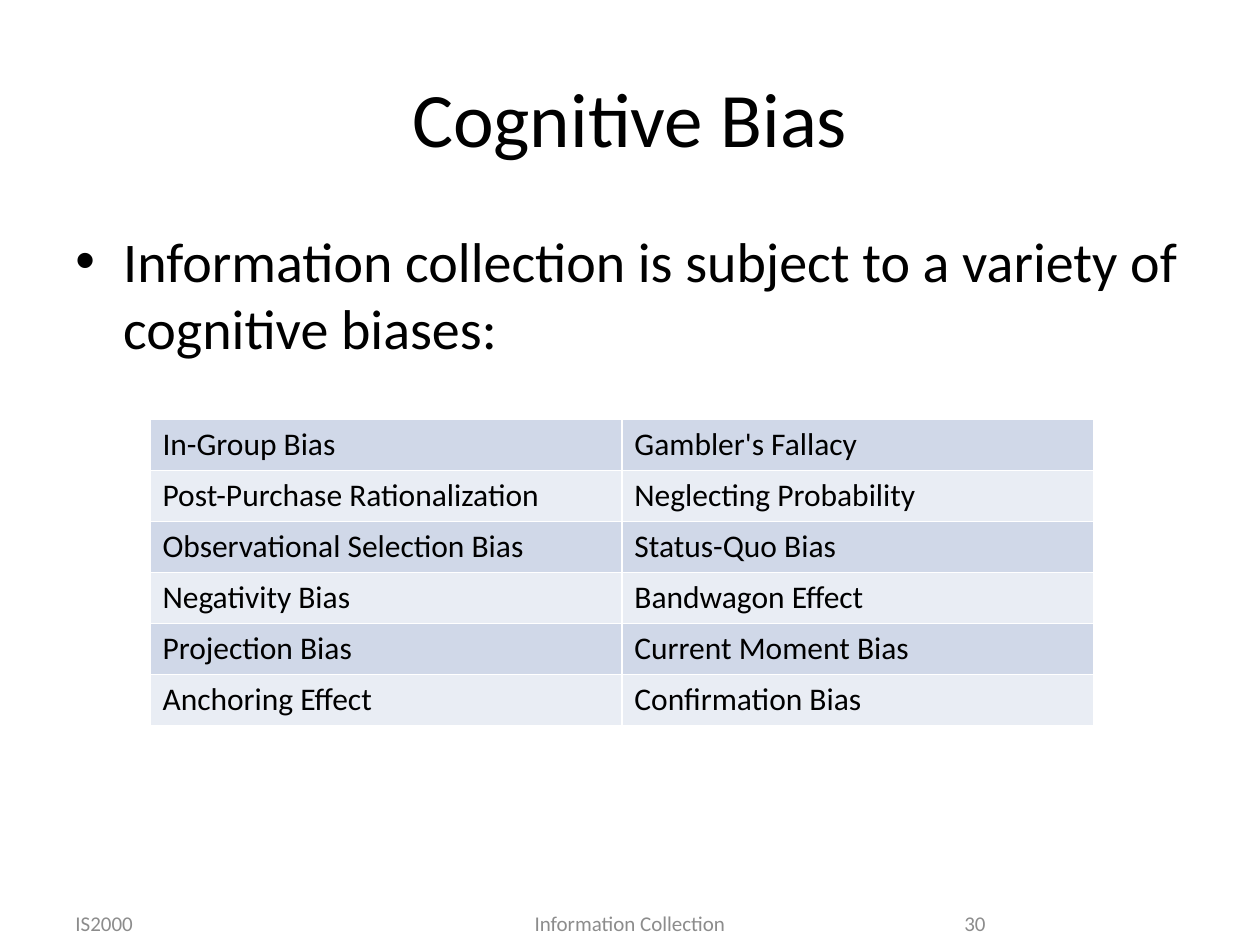
from lxml.etree import SubElement
from pptx import Presentation
from pptx.dml.color import RGBColor
from pptx.enum.text import MSO_ANCHOR as Anchor, PP_ALIGN as Align
from pptx.oxml.ns import qn
from pptx.util import Inches, Pt

BLACK = RGBColor(0x00, 0x00, 0x00)
GRAY = RGBColor(0x8C, 0x8C, 0x8C)
BANDS = [RGBColor(0xD0, 0xD8, 0xE8), RGBColor(0xE9, 0xED, 0xF4)]
FACE = "Calibri"


def style(para, size, color):
    para.font.name = FACE
    para.font.size = Pt(size)
    para.font.color.rgb = color


def add_text(slide, text, box, size, color, align=Align.LEFT, anchor=Anchor.MIDDLE, bullet=False):
    frame = slide.shapes.add_textbox(*map(Inches, box)).text_frame
    frame.word_wrap = True
    frame.vertical_anchor = anchor
    para = frame.paragraphs[0]
    para.text = text
    para.alignment = align
    if bullet:
        props = para._p.get_or_add_pPr()
        props.set("marL", str(Inches(0.38)))
        props.set("indent", str(Inches(-0.38)))
        SubElement(props, qn("a:buFont"), typeface="Arial")
        SubElement(props, qn("a:buChar"), char="•")
    style(para, size, color)


deck = Presentation()
deck.slide_width, deck.slide_height = Inches(10), Inches(7.5)
slide = deck.slides.add_slide(deck.slide_layouts[6])

add_text(slide, "Cognitive Bias", (0.5, 0.3, 9, 1.25), 44, BLACK, Align.CENTER)
add_text(slide, "Information collection is subject to a variety of cognitive biases:",
         (0.5, 1.75, 9, 4.95), 32, BLACK, anchor=Anchor.TOP, bullet=True)

footers = [
    ("IS2000", 0.5, 2.33, Align.LEFT),
    ("Information Collection", 3.07, 3.86, Align.CENTER),
    ("30", 7.17, 0.75, Align.RIGHT),
]
for text, left, width, align in footers:
    add_text(slide, text, (left, 7.17, width, 0.31), 12, GRAY, align)

biases = [
    ("In-Group Bias", "Gambler's Fallacy"),
    ("Post-Purchase Rationalization", "Neglecting Probability"),
    ("Observational Selection Bias", "Status-Quo Bias"),
    ("Negativity Bias", "Bandwagon Effect"),
    ("Projection Bias", "Current Moment Bias"),
    ("Anchoring Effect", "Confirmation Bias"),
]
table = slide.shapes.add_table(len(biases), 2, Inches(1.19), Inches(3.33),
                               Inches(7.49), Inches(2.43)).table
table.first_row = False
for i, row in enumerate(biases):
    for j, text in enumerate(row):
        cell = table.cell(i, j)
        cell.text = text
        cell.fill.solid()
        cell.fill.fore_color.rgb = BANDS[i % 2]
        style(cell.text_frame.paragraphs[0], 18, BLACK)

deck.save("out.pptx")
